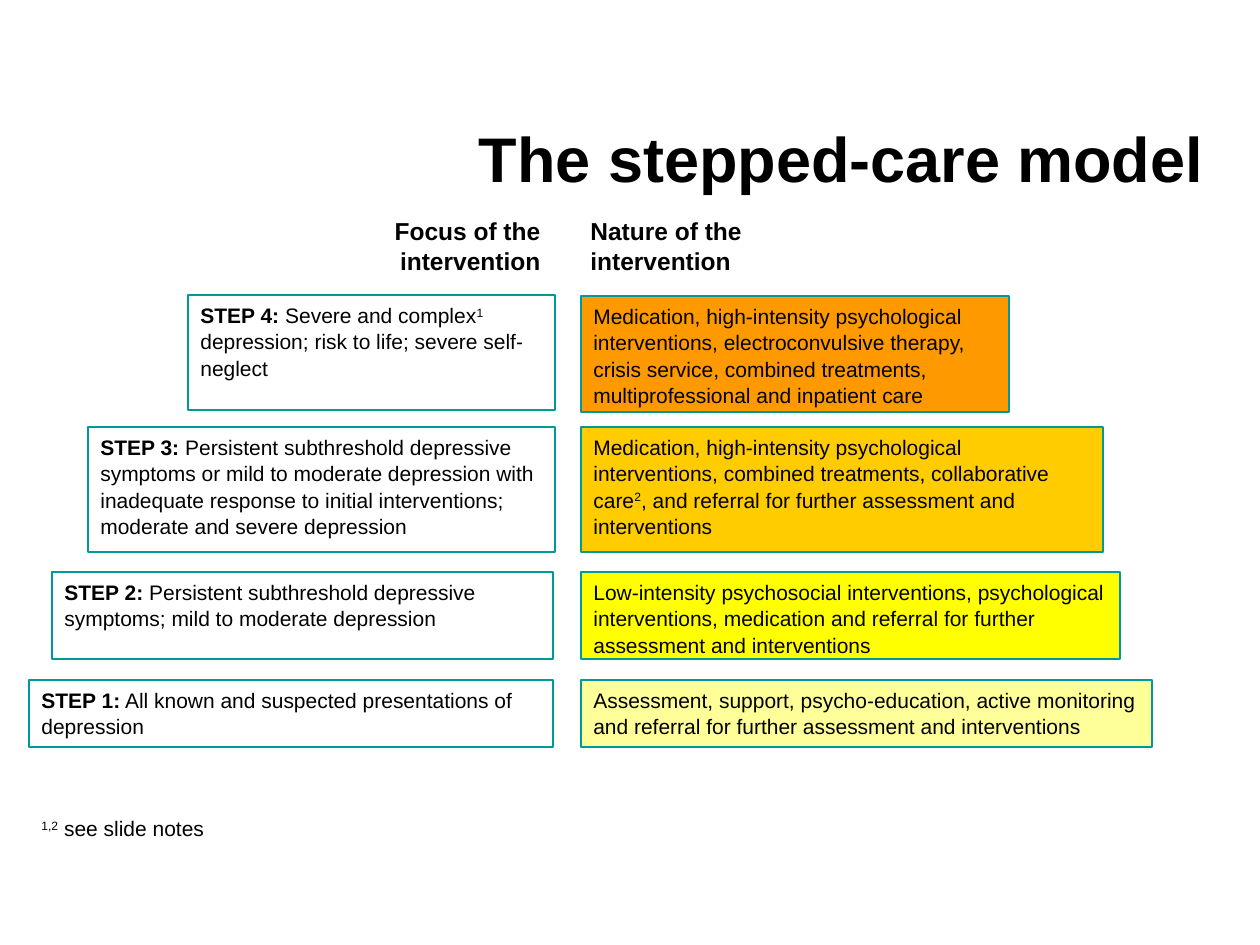
from pptx import Presentation
from pptx.dml.color import RGBColor
from pptx.enum.shapes import MSO_SHAPE
from pptx.enum.text import MSO_ANCHOR, PP_ALIGN
from pptx.util import Pt

EMU_PER_PX = 914400 // 126
THEME = {
    "font": "Arial",
    "text": RGBColor.from_string("000000"),
    "border": RGBColor.from_string("009999"),
    "steps": {4: "FF9900", 3: "FFCC00", 2: "FFFF00", 1: "FFFF99"},
    "title": 36,
    "heading": 14,
    "body": 12,
    "border_width": 0.75,
    "line_spacing": 1.05,
}


def px(*lengths):
    return [length * EMU_PER_PX for length in lengths]


def write_text(shape, runs, size, align=PP_ALIGN.LEFT, anchor=MSO_ANCHOR.TOP):
    frame = shape.text_frame
    frame.word_wrap = True
    frame.vertical_anchor = anchor
    paragraph = frame.paragraphs[0]
    paragraph.alignment = align
    paragraph.line_spacing = THEME["line_spacing"]
    for text, style in runs:
        run = paragraph.add_run()
        run.text = text
        font_values = {"name": THEME["font"], "size": Pt(size), "bold": style == "bold"}
        for name, value in font_values.items():
            setattr(run.font, name, value)
        run.font.color.rgb = THEME["text"]
        if style == "superscript":
            run.font._element.set("baseline", "30000")


presentation = Presentation()
presentation.slide_width, presentation.slide_height = px(1260, 945)
slide = presentation.slides.add_slide(presentation.slide_layouts[6])

steps = [
    (4, (188, 295, 367, 115), (581, 296, 428, 116),
     [("Severe and complex", ""), ("1", "superscript"),
      (" depression; risk to life; severe self-neglect", "")],
     [("Medication, high-intensity psychological interventions, electroconvulsive therapy, "
       "crisis service, combined treatments, multiprofessional and inpatient care", "")]),
    (3, (88, 427, 467, 125), (581, 427, 522, 125),
     [("Persistent subthreshold depressive symptoms or mild to moderate depression with "
       "inadequate response to initial interventions; moderate and severe depression", "")],
     [("Medication, high-intensity psychological interventions, combined treatments, "
       "collaborative care", ""), ("2", "superscript"),
      (", and referral for further assessment and interventions", "")]),
    (2, (52, 572, 501, 87), (581, 572, 539, 87),
     [("Persistent subthreshold depressive symptoms; mild to moderate depression", "")],
     [("Low-intensity psychosocial interventions, psychological interventions, medication "
       "and referral for further assessment and interventions", "")]),
    (1, (29, 680, 524, 67), (581, 680, 571, 67),
     [("All known and suspected presentations of depression", "")],
     [("Assessment, support, psycho-education, active monitoring and referral for further "
       "assessment and interventions", "")]),
]

for number, focus_box, nature_box, focus, nature in steps:
    label = [(f"STEP {number}:", "bold"), (" ", "")]
    for box, runs, fill in (
        (focus_box, label + focus, None),
        (nature_box, nature, THEME["steps"][number]),
    ):
        shape = slide.shapes.add_shape(MSO_SHAPE.RECTANGLE, *px(*box))
        shape.shadow.inherit = False
        if fill:
            shape.fill.solid()
            shape.fill.fore_color.rgb = RGBColor.from_string(fill)
        else:
            shape.fill.background()
        shape.line.color.rgb = THEME["border"]
        shape.line.width = Pt(THEME["border_width"])
        write_text(shape, runs, THEME["body"])

captions = [
    ((223, 66, 993, 178), [("The stepped-care model", "bold")],
     "title", PP_ALIGN.RIGHT, MSO_ANCHOR.MIDDLE),
    ((315, 208, 238, 87), [("Focus of the intervention", "bold")],
     "heading", PP_ALIGN.RIGHT, MSO_ANCHOR.TOP),
    ((578, 208, 238, 87), [("Nature of the intervention", "bold")],
     "heading", PP_ALIGN.LEFT, MSO_ANCHOR.TOP),
    ((29, 808, 896, 38), [("1,2", "superscript"), (" see slide notes", "")],
     "body", PP_ALIGN.LEFT, MSO_ANCHOR.TOP),
]

for box, runs, size, align, anchor in captions:
    caption = slide.shapes.add_textbox(*px(*box))
    write_text(caption, runs, THEME[size], align, anchor)

presentation.save("out.pptx")
